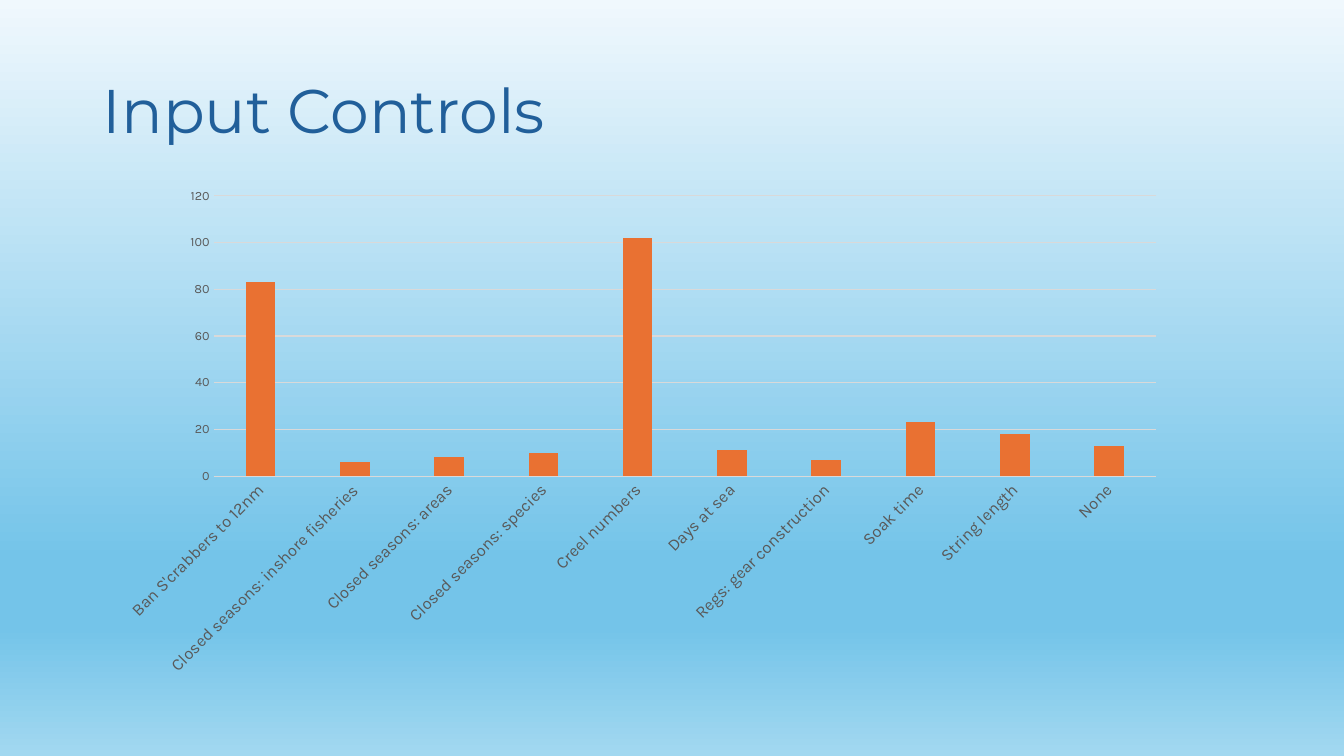
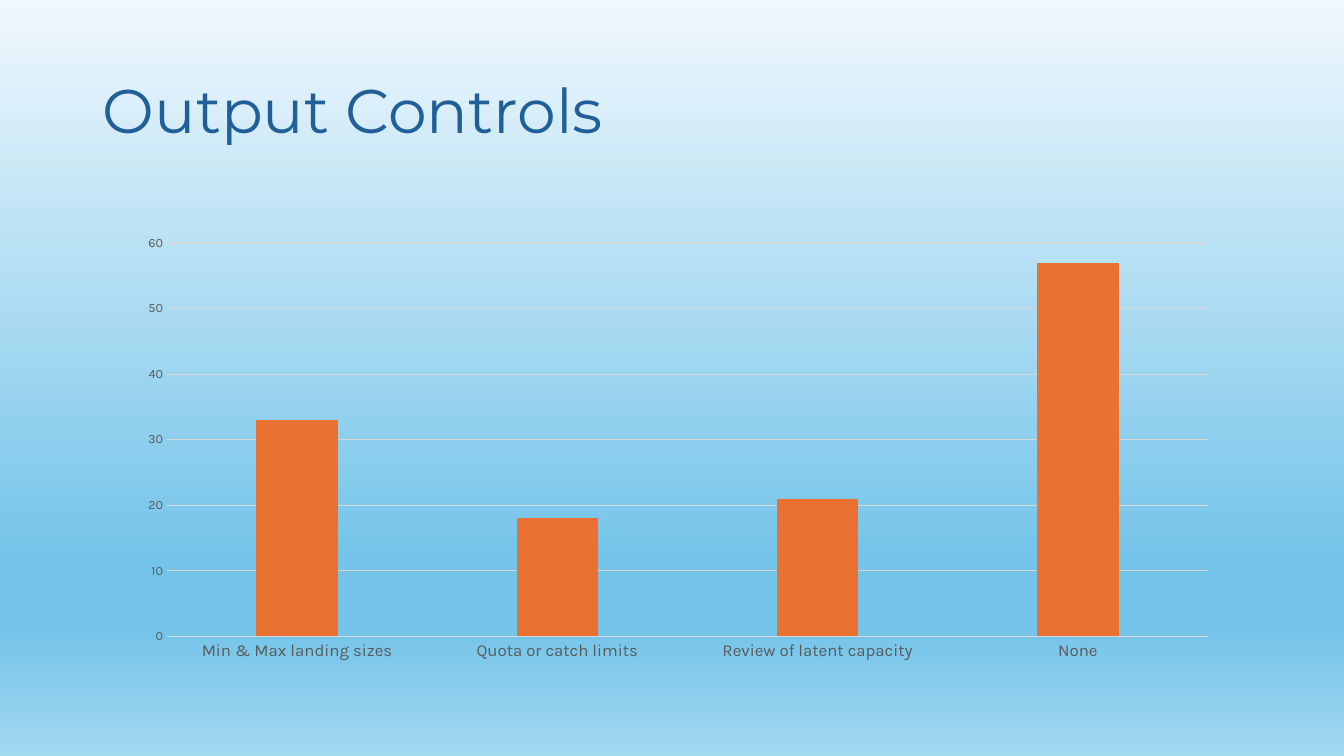
from dataclasses import dataclass

from lxml import etree
from pptx import Presentation
from pptx.chart.data import CategoryChartData
from pptx.dml.color import RGBColor
from pptx.enum.chart import XL_CHART_TYPE, XL_TICK_MARK
from pptx.enum.text import MSO_ANCHOR, MSO_AUTO_SIZE, PP_ALIGN
from pptx.oxml.ns import qn
from pptx.util import Inches, Pt

COLUMN = XL_CHART_TYPE.COLUMN_CLUSTERED
NO_TICK = XL_TICK_MARK.NONE
MIDDLE = MSO_ANCHOR.MIDDLE
NO_FIT = MSO_AUTO_SIZE.NONE
LEFT = PP_ALIGN.LEFT


@dataclass(frozen=True)
class Theme:
    sky: tuple = ((0, "F0F8FD"), (74, "74C4E9"), (83, "74C4E9"), (100, "A2D8F0"))
    title: str = "215F9A"
    bar: str = "E97132"
    label: str = "595959"
    rule: str = "D9D9D9"
    text: str = "000000"
    head_font: str = "Montserrat"
    body_font: str = "Karla"
    title_size: int = 44
    chart_size: int = 10
    cat_size: int = 12
    val_size: int = 9
    rule_width: float = 0.75


theme = Theme()


def style_font(font, name, size, color):
    font.name = name
    font.size = Pt(size)
    font.color.rgb = RGBColor.from_string(color)


def style_line(line):
    line.color.rgb = RGBColor.from_string(theme.rule)
    line.width = Pt(theme.rule_width)


slides = [
    {
        "title": "Input Controls",
        "box": (1.05, 1.77, 10.63, 5.03),
        "top": 120,
        "step": 20,
        "turn": -45,
        "data": {
            "Ban S'crabbers to 12nm": 83,
            "Closed seasons: inshore fisheries": 6,
            "Closed seasons: areas": 8,
            "Closed seasons: species": 10,
            "Creel numbers": 102,
            "Days at sea": 11,
            "Regs: gear construction": 7,
            "Soak time": 23,
            "String length": 18,
            "None": 13,
        },
    },
    {
        "title": "Output Controls",
        "box": (1.25, 2.25, 10.95, 4.39),
        "top": 60,
        "step": 10,
        "turn": 0,
        "data": {
            "Min & Max landing sizes": 33,
            "Quota or catch limits": 18,
            "Review of latent capacity": 21,
            "None": 57,
        },
    },
]

deck = Presentation()
deck.slide_width = Inches(13.33)
deck.slide_height = Inches(7.5)

master = deck.slide_master
fill = master.background.fill
fill.gradient()
fill.gradient_angle = 270
stops = next(master.element.iter(qn("a:gsLst")))
for stop in list(stops):
    stops.remove(stop)
for place, color in theme.sky:
    stop = etree.SubElement(stops, qn("a:gs"), pos=str(place * 1000))
    etree.SubElement(stop, qn("a:srgbClr"), val=color)

layout = deck.slide_layouts.get_by_name("Title Only")

for item in slides:
    slide = deck.slides.add_slide(layout)

    title = slide.shapes.title
    title.left, title.top = Inches(0.92), Inches(0.4)
    title.width, title.height = Inches(11.5), Inches(1.45)
    frame = title.text_frame
    frame.text = item["title"]
    frame.vertical_anchor = MIDDLE
    frame.auto_size = NO_FIT
    para = frame.paragraphs[0]
    para.alignment = LEFT
    para.line_spacing = 0.9
    style_font(para.font, theme.head_font, theme.title_size, theme.title)

    data = CategoryChartData()
    data.categories = list(item["data"])
    data.add_series("Series 1", list(item["data"].values()))
    box = [Inches(size) for size in item["box"]]
    chart = slide.shapes.add_chart(COLUMN, *box, data).chart
    chart.has_title = False
    chart.has_legend = False
    style_font(chart.font, theme.body_font, theme.chart_size, theme.text)

    plot = chart.plots[0]
    plot.gap_width = 219
    plot.overlap = -27
    plot.vary_by_categories = False
    bars = plot.series[0]
    bars.invert_if_negative = False
    bars.format.fill.solid()
    bars.format.fill.fore_color.rgb = RGBColor.from_string(theme.bar)

    cats, vals = chart.category_axis, chart.value_axis
    for axis, size in ((cats, theme.cat_size), (vals, theme.val_size)):
        axis.major_tick_mark = NO_TICK
        axis.minor_tick_mark = NO_TICK
        style_font(axis.tick_labels.font, theme.body_font, size, theme.label)
    style_line(cats.format.line)
    vals.format.line.fill.background()
    vals.has_major_gridlines = True
    style_line(vals.major_gridlines.format.line)
    vals.minimum_scale = 0
    vals.maximum_scale = item["top"]
    vals.major_unit = item["step"]

    node = next(chart.element.iter(qn("c:catAx")))
    body = next(node.iter(qn("a:bodyPr")))
    body.set("rot", str(item["turn"] * 60000))

deck.save("out.pptx")
